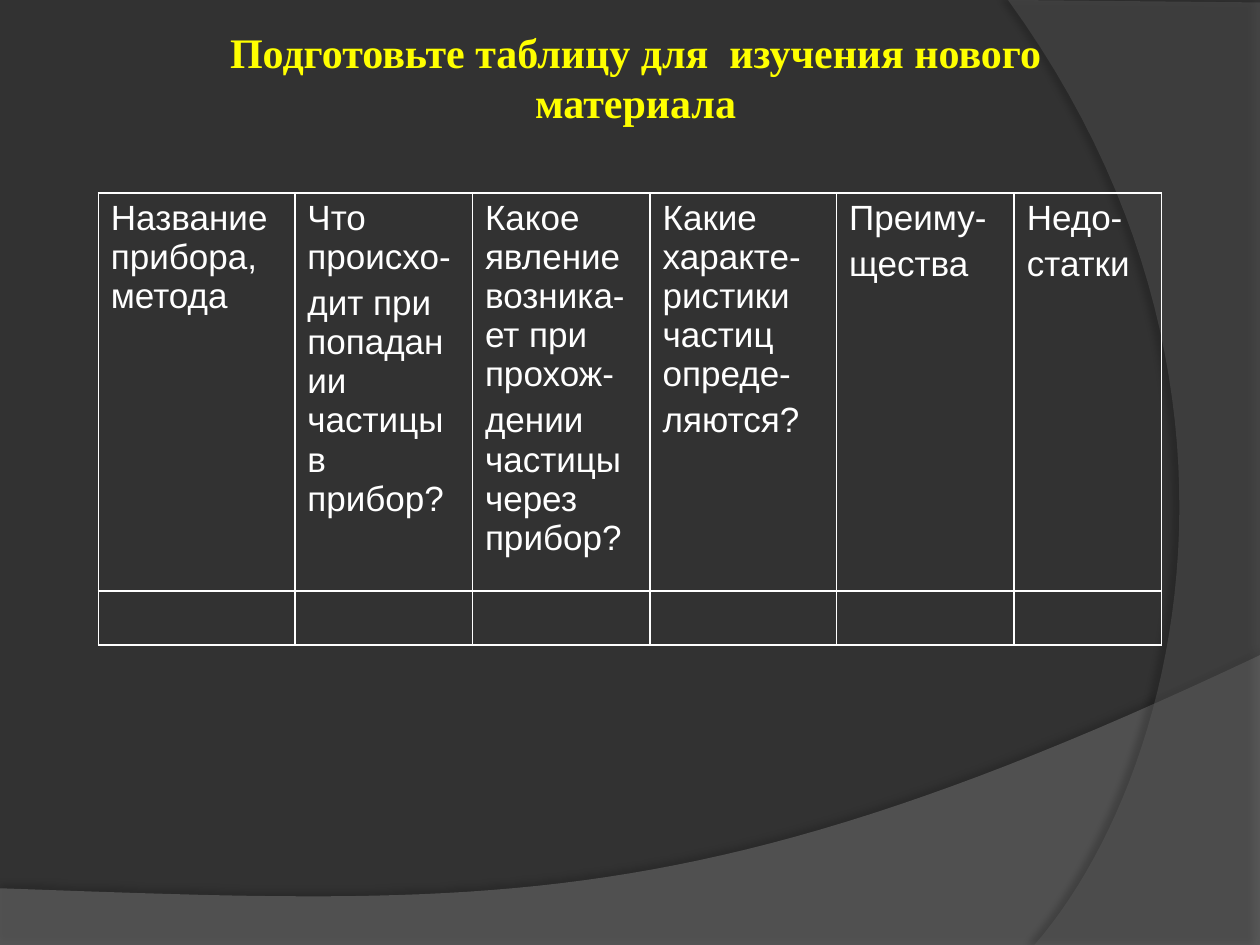
from lxml.etree import SubElement
from pptx import Presentation
from pptx.dml.color import RGBColor
from pptx.enum.text import MSO_AUTO_SIZE, PP_ALIGN
from pptx.oxml.ns import qn
from pptx.util import Inches, Pt

DARK = RGBColor(0x32, 0x32, 0x32)
WAVE = RGBColor(0x7F, 0x7F, 0x7F)
ARC = RGBColor(0x5E, 0x5E, 0x5E)
BLACK = RGBColor(0, 0, 0)
WHITE = RGBColor(0xFF, 0xFF, 0xFF)
YELLOW = RGBColor(0xFF, 0xFF, 0)

WIDE, HIGH = 10, 7.5
TITLE = "Подготовьте таблицу для  изучения нового материала"
COLS = [1.56, 1.41, 1.41, 1.48, 1.41, 1.17]
ROWS = [3.16, 0.43]
HEADS = [
    ["Название прибора, метода"],
    ["Что происхо-", "дит при попадании частицы в прибор?"],
    ["Какое явление возника-ет при прохож-", "дении частицы через прибор?"],
    ["Какие характе-ристики частиц опреде-", "ляются?"],
    ["Преиму-", "щества"],
    ["Недо-", "статки"],
]


def curve(a, b, c, d, steps=48):
    """Points of a cubic Bezier curve from a to d."""
    for i in range(steps + 1):
        t = i / steps
        u = 1 - t
        yield tuple(u**3 * p + 3 * u * u * t * q + 3 * u * t * t * r + t**3 * s
                    for p, q, r, s in zip(a, b, c, d))


def tint(parent, color, alpha):
    """Add a partly transparent colour to an XML element."""
    node = SubElement(parent, qn("a:srgbClr"), val=str(color))
    SubElement(node, qn("a:alpha"), val=str(alpha * 1000))


class Deck:
    def __init__(self):
        self.prs = Presentation()
        self.prs.slide_width, self.prs.slide_height = Inches(WIDE), Inches(HIGH)
        self.slide = self.prs.slides.add_slide(self.prs.slide_layouts[6])
        self.shapes = self.slide.shapes
        fill = self.slide.background.fill
        fill.solid()
        fill.fore_color.rgb = DARK

    def box(self, x, y, w, h):
        """Turn shares of the slide into lengths."""
        return (Inches(x * WIDE), Inches(y * HIGH),
                Inches(w * WIDE), Inches(h * HIGH))

    def style(self, para, font, size, color, bold=False):
        para.font.name, para.font.size = font, Pt(size)
        para.font.bold = bold
        para.font.color.rgb = color

    def sweep(self, points, color, alpha, shade, dist, angle):
        """Draw a translucent outline with a soft shadow."""
        dots = [(Inches(x), Inches(y)) for x, y in points]
        pen = self.shapes.build_freeform(*dots[0], scale=1.0)
        pen.add_line_segments(dots[1:], close=True)
        shape = pen.convert_to_shape()
        shape.line.fill.background()
        shape.fill.solid()
        shape.fill.fore_color.rgb = color
        props = shape.fill._xPr
        paint = props.find(qn("a:solidFill"))
        paint.clear()
        tint(paint, color, alpha)
        shape.shadow.inherit = False
        glow = SubElement(props.find(qn("a:effectLst")), qn("a:outerShdw"),
                          blurRad=str(Pt(4)), dist=str(Pt(dist)),
                          dir=str(angle * 60000), algn="ctr", rotWithShape="0")
        tint(glow, BLACK, shade)

    def title(self, text, *area):
        frame = self.shapes.add_textbox(*self.box(*area)).text_frame
        frame.word_wrap = True
        frame.auto_size = MSO_AUTO_SIZE.SHAPE_TO_FIT_TEXT
        para = frame.paragraphs[0]
        para.text = text
        para.alignment = PP_ALIGN.CENTER
        self.style(para, "Times New Roman", 24, YELLOW, True)

    def border(self, cell):
        props = cell._tc.get_or_add_tcPr()
        for i, side in enumerate(("lnL", "lnR", "lnT", "lnB")):
            line = props.makeelement(qn("a:" + side), {"w": str(Pt(1))})
            paint = SubElement(line, qn("a:solidFill"))
            SubElement(paint, qn("a:srgbClr"), val=str(WHITE))
            props.insert(i, line)

    def table(self, heads, cols, rows, *area):
        grid = self.shapes.add_table(len(rows), len(cols), *self.box(*area)).table
        grid.first_row = grid.horz_banding = False
        for col, width in zip(grid.columns, cols):
            col.width = Inches(width)
        for row, height in zip(grid.rows, rows):
            row.height = Inches(height)
        for cell in grid.iter_cells():
            cell.fill.background()
            self.border(cell)
        for cell, lines in zip(grid.rows[0].cells, heads):
            cell.text = "\n".join(lines)
            for para in cell.text_frame.paragraphs:
                para.space_before = Pt(4)
                self.style(para, "Arial", 20, WHITE)


def main():
    deck = Deck()
    # Background sweeps
    wave = curve((WIDE, 5.2), (5.59, 7.29), (3.91, 7.19), (0, 7.05))
    deck.sweep([(0, HIGH), (WIDE, HIGH), *wave], WAVE, 45, 35, 3.5, 270)
    arc = curve((8.21, HIGH), (9.35, 6.19), (10.18, 3), (8, 0))
    deck.sweep([(WIDE, 0.02), (WIDE, HIGH), *arc], ARC, 40, 45, 4, 180)
    # Heading and table to fill in
    deck.title(TITLE, 0.141, 0.021, 0.727, 0.121)
    deck.table(HEADS, COLS, ROWS, 0.078, 0.204, 0.844, 0.48)
    deck.prs.save("out.pptx")


if __name__ == "__main__":
    main()
